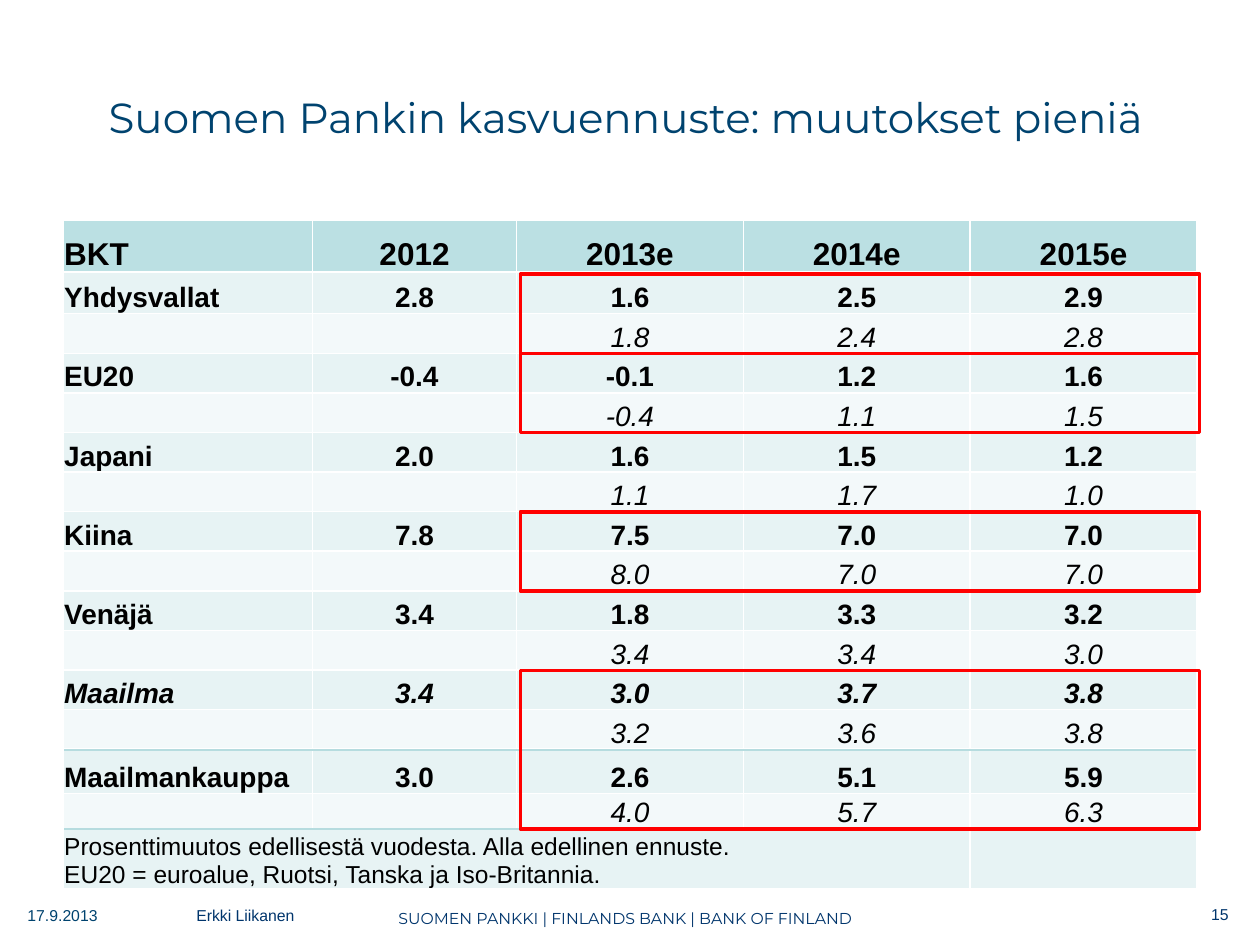
from itertools import accumulate

from lxml import etree
from pptx import Presentation
from pptx import util as u
from pptx.dml.color import RGBColor
from pptx.enum import shapes, text
from pptx.oxml.ns import qn

HUES = {"ink": "000000", "title": "00436F", "foot": "00356C", "head": "BBE0E3",
        "main": "E7F3F4", "prior": "F3F9FA", "rule": "B6DCDF", "mark": "FF0000"}
ALIGN = {"l": text.PP_ALIGN.LEFT, "c": text.PP_ALIGN.CENTER, "r": text.PP_ALIGN.RIGHT}
YEARS = ["BKT", "2012", "2013e", "2014e", "2015e"]
# Area, then its new figures, then its previous forecast
AREAS = [
    ("Yhdysvallat", "2.8 1.6 2.5 2.9", "1.8 2.4 2.8"),
    ("EU20", "-0.4 -0.1 1.2 1.6", "-0.4 1.1 1.5"),
    ("Japani", "2.0 1.6 1.5 1.2", "1.1 1.7 1.0"),
    ("Kiina", "7.8 7.5 7.0 7.0", "8.0 7.0 7.0"),
    ("Venäjä", "3.4 1.8 3.3 3.2", "3.4 3.4 3.0"),
    ("Maailma", "3.4 3.0 3.7 3.8", "3.2 3.6 3.8"),
    ("Maailmankauppa", "3.0 2.6 5.1 5.9", "4.0 5.7 6.3"),
]
NOTES = ["Prosenttimuutos edellisestä vuodesta. Alla edellinen ennuste.",
         "EU20 = euroalue, Ruotsi, Tanska ja Iso-Britannia."]

# Grid of 100 columns by 75 rows
LEFT, TOP = 5, 17.5
STEP = 34.6 / 11
WIDTHS = [19.8, 16.2, 18, 18, 18]
HEIGHTS = [4.1, 3.3] + [STEP] * 11 + [3.5, 2.8, 4.3]
EDGES = list(accumulate(HEIGHTS, initial=TOP))


class Deck:
    def __init__(self):
        self.prs = Presentation()
        self.prs.slide_width, self.prs.slide_height = u.Inches(10), u.Inches(7.5)
        self.slide = self.prs.slides.add_slide(self.prs.slide_layouts[6])
        self.unit = self.prs.slide_width / 100

    def grid(self, *cells):
        return [round(n * self.unit) for n in cells]

    def tint(self, name):
        return RGBColor.from_string(HUES[name])

    def words(self, para, line, size, hue="ink", face="Arial", side="l",
              bold=False, slant=False):
        para.alignment = ALIGN[side]
        run = para.add_run()
        run.text = line
        font = run.font
        font.name, font.size, font.bold, font.italic = face, u.Pt(size), bold, slant
        font.color.rgb = self.tint(hue)

    def label(self, box, line, size, mid=False, **style):
        frame = self.slide.shapes.add_textbox(*self.grid(*box)).text_frame
        frame.word_wrap = True
        if mid:
            frame.vertical_anchor = text.MSO_ANCHOR.MIDDLE
        self.words(frame.paragraphs[0], line, size, **style)

    def table(self):
        shape = self.slide.shapes.add_table(
            len(HEIGHTS), len(WIDTHS),
            *self.grid(LEFT, TOP, sum(WIDTHS), sum(HEIGHTS)))
        table = shape.table
        for col, wide in zip(table.columns, self.grid(*WIDTHS)):
            col.width = wide
        for row, high in zip(table.rows, self.grid(*HEIGHTS)):
            row.height = high
        return table

    def cell(self, cell, lines, fill, size, **style):
        cell.fill.solid()
        cell.fill.fore_color.rgb = self.tint(fill)
        cell.margin_left = cell.margin_right = cell.margin_top = u.Inches(0.01)
        cell.margin_bottom = 0
        cell.vertical_anchor = text.MSO_ANCHOR.BOTTOM
        frame = cell.text_frame
        for i, line in enumerate(lines):
            para = frame.add_paragraph() if i else frame.paragraphs[0]
            self.words(para, line, size, **style)
        if not lines:  # keeps an empty cell from stretching its row
            end = frame.paragraphs[0]._p.get_or_add_endParaRPr()
            end.set("sz", str(size * 100))

    def row(self, table, i, items, fill, size, **style):
        for j, item in enumerate(items):
            self.cell(table.cell(i, j), [item] if item else [], fill, size,
                      side="c" if j else "l", **style)

    def rule(self, y):
        ends = self.grid(LEFT + 0.1, y, LEFT + sum(WIDTHS) - 0.1, y)
        line = self.slide.shapes.add_connector(shapes.MSO_CONNECTOR.STRAIGHT, *ends)
        line.line.color.rgb = self.tint("rule")
        line.line.width = u.Pt(1.25)
        etree.SubElement(line._element.spPr, qn("a:effectLst"))

    def frame(self, last, areas=1):
        """Mark the forecasts of some areas, ending with table row last."""
        high = areas * 2 * STEP
        box = self.grid(LEFT + sum(WIDTHS[:2]) + 0.3, EDGES[last + 1] - high,
                        sum(WIDTHS[2:]) - 0.1, high)
        rect = self.slide.shapes.add_shape(shapes.MSO_SHAPE.RECTANGLE, *box)
        rect.shadow.inherit = False
        rect.fill.background()
        rect.line.color.rgb = self.tint("mark")
        rect.line.width = u.Pt(2)


def main():
    deck = Deck()
    deck.label((5, 71.6, 89.2, 2.8), "SUOMEN PANKKI | FINLANDS BANK | BANK OF FINLAND",
               9, hue="foot", face="Montserrat", side="c")
    deck.label((2, 3, 95.3, 12.5), "Suomen Pankin kasvuennuste: muutokset pieniä",
               24, mid=True, hue="title", face="Montserrat", side="c")

    table = deck.table()
    deck.row(table, 0, YEARS, "head", 18, bold=True)
    for i, (area, now, prior) in enumerate(AREAS):
        deck.row(table, 2 * i + 1, [area, *now.split()], "main", 16,
                 bold=True, slant=area == "Maailma")
        deck.row(table, 2 * i + 2, ["", "", *prior.split()], "prior", 16, slant=True)
    foot = len(HEIGHTS) - 1
    table.cell(foot, 0).merge(table.cell(foot, 3))
    deck.cell(table.cell(foot, 0), NOTES, "main", 14)
    deck.cell(table.cell(foot, 4), [], "main", 14)

    for i in (13, 15):
        deck.rule(EDGES[i])
    deck.label((1.2, 71.4, 12.6, 3.6), "17.9.2013", 9, hue="title")
    deck.label((87.8, 71.3, 10.7, 3.2), "15", 9, hue="foot", side="r")
    deck.label((14.6, 71.4, 15.7, 3.6), "Erkki Liikanen", 9, hue="foot")
    for last in (4, 2, 8):
        deck.frame(last)
    deck.frame(14, areas=2)
    deck.prs.save("out.pptx")


if __name__ == "__main__":
    main()
